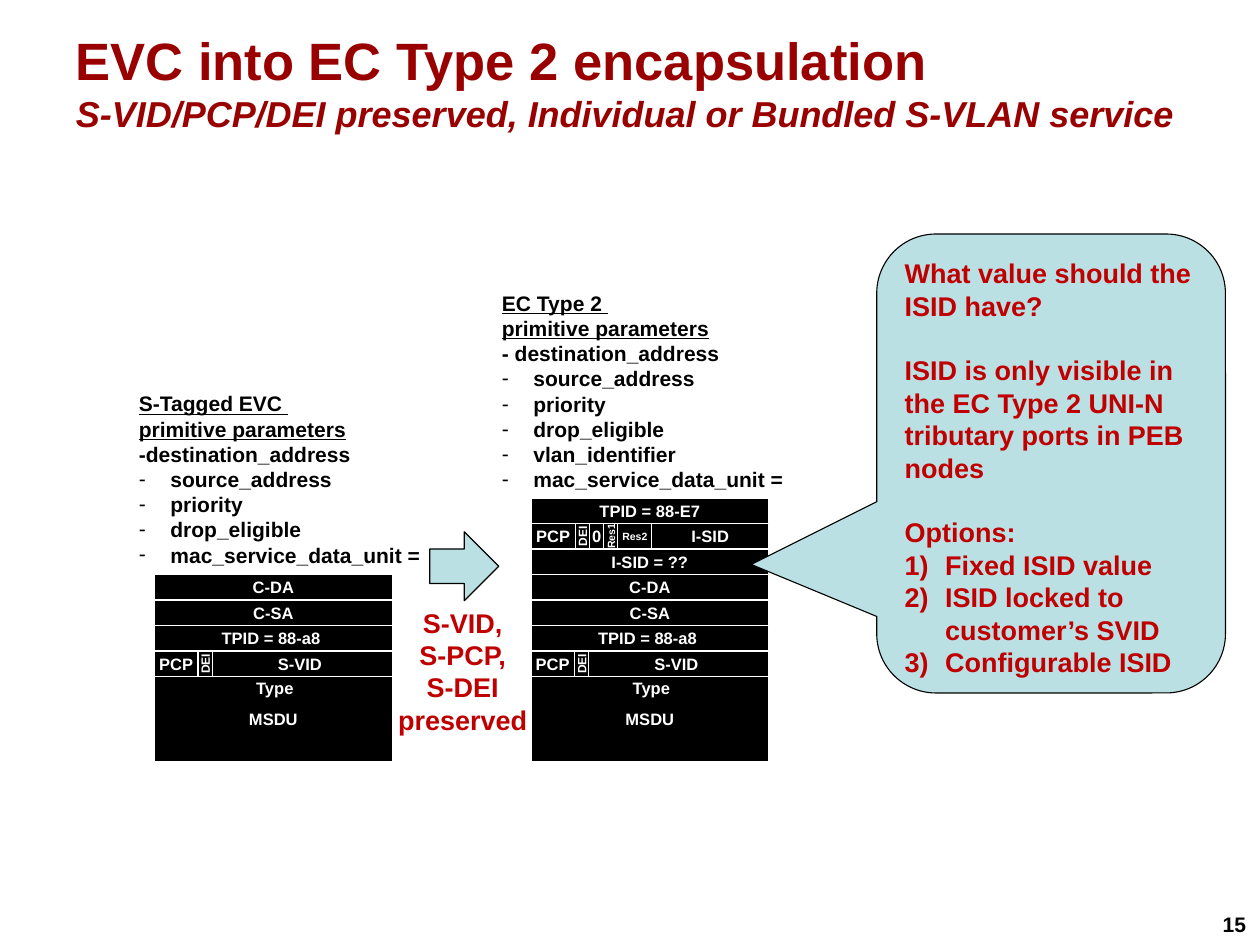
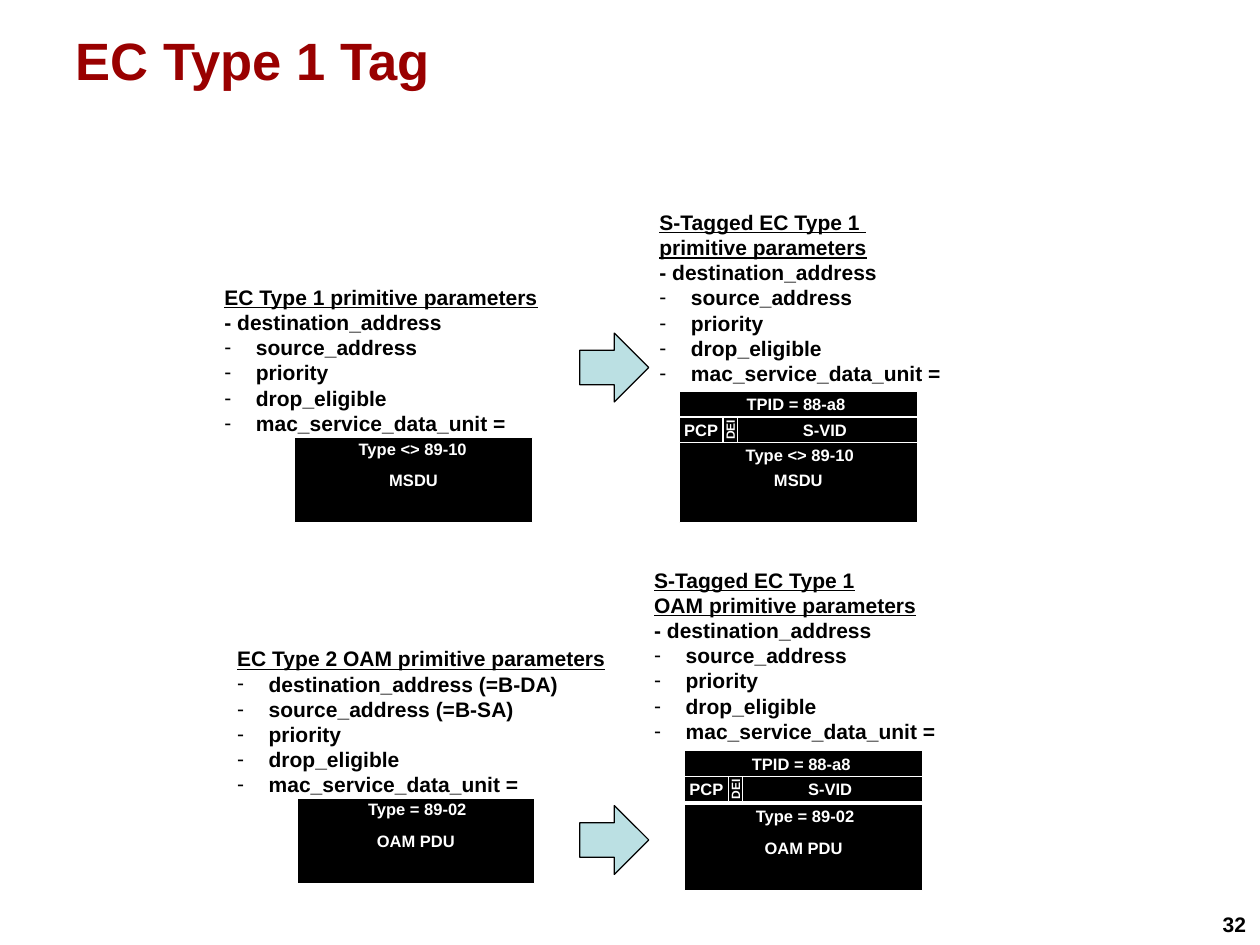
from lxml.etree import SubElement
from pptx import Presentation
from pptx.dml.color import RGBColor
from pptx.enum.shapes import MSO_SHAPE
from pptx.enum.text import MSO_ANCHOR, PP_ALIGN
from pptx.oxml.ns import qn
from pptx.util import Pt

# Shared look
FONT = "Arial"
BLACK, WHITE, TITLE_RED, NOTE_RED, PALE_BLUE = "000000", "FFFFFF", "990000", "C00000", "BBE0E3"
STACK_WIDTH, ROW_HEIGHT, BODY_HEIGHT = 158.5, 17, 57
ARROW_SIZE = 46
LINE_FACTOR = 1.2
BULLET_INDENT, NUMBER_INDENT = 21, 27

# Frame rows: each cell is (text, width, size, vertical)
def full_row(text):
    return [(text, STACK_WIDTH, 11, False)]


S_TPID = full_row("TPID = 88-a8 ")
S_TAG = [("PCP", 29, 11, False), ("DEI", 9.5, 8, True), ("S-VID ", 120, 11, False)]
I_TAG = [("PCP", 29.5, 11, False), ("DEI", 9.5, 8, True), ("0", 9.5, 11, False),
         ("Res1", 9.5, 7, True), ("Res2", 22.5, 7, False), ("I-SID", 78, 11, False)]
CUSTOMER_ROWS = [full_row("C-DA"), full_row("C-SA"), S_TPID, S_TAG]
I_ROWS = [full_row("TPID = 88-E7"), I_TAG, full_row("I-SID = ??")]

# Primitive parameters
ADDRESS = "- destination_address"
COMMON = ["source_address", "priority", "drop_eligible"]
DATA_UNIT = "mac_service_data_unit ="

# Stacks: left, top of rows, rows, top of body, type text, type shift, body text
# Parameters: left, top, width, headings, plain lines, bulleted lines
SLIDES = [
    {
        "number": "15",
        "title": [("EVC into EC Type 2 encapsulation", 35, False),
                  ("S-VID/PCP/DEI preserved, Individual or Bundled S-VLAN service", 24, True)],
        "stacks": [
            (103, 383, CUSTOMER_ROWS, 451, "Type", 0, "MSDU"),
            (354, 332, I_ROWS + CUSTOMER_ROWS, 451, "Type", 0, "MSDU"),
        ],
        "parameters": [
            (85.5, 257, 212, ["S-Tagged EVC ", "primitive parameters"],
             ["-destination_address"], COMMON + [DATA_UNIT]),
            (327.5, 190, 218, ["EC Type 2 ", "primitive parameters"],
             [ADDRESS], COMMON + ["vlan_identifier", DATA_UNIT]),
        ],
        "arrows": [(286.5, 354.5)],
    },
    {
        "number": "32",
        "title": [("EC Type 1 Tag", 35, False)],
        "stacks": [
            (196.5, 291.5, [], 291.5, "Type <> 89-10 ", 0, "MSDU"),
            (198, 532, [], 532, "Type = 89-02", 0, "OAM PDU"),
            (453, 261, [S_TPID, S_TAG], 291.5, "Type <> 89-10", 4.5, "MSDU"),
            (456.5, 500.5, [S_TPID, S_TAG], 536.5, "Type = 89-02", 0, "OAM PDU"),
        ],
        "parameters": [
            (142.5, 186, 248, ["EC Type 1 primitive parameters"],
             [ADDRESS], COMMON + [DATA_UNIT]),
            (151, 427, 270, ["EC Type 2 OAM primitive parameters"], [],
             ["destination_address (=B-DA)", "source_address (=B-SA)",
              "priority", "drop_eligible", DATA_UNIT]),
            (432.5, 136, 218, ["S-Tagged EC Type 1 ", "primitive parameters"],
             [ADDRESS], COMMON + [DATA_UNIT]),
            (429, 374.5, 215, ["S-Tagged EC Type 1", "OAM primitive parameters"],
             [ADDRESS], COMMON + [DATA_UNIT]),
        ],
        "arrows": [(386.5, 222), (386.5, 537)],
    },
]

PRESERVED = ["S-VID,", "S-PCP,", "S-DEI preserved"]
QUESTIONS = ["What value should the ISID have?",
             "ISID is only visible in the EC Type 2 UNI-N tributary ports in PEB nodes",
             "Options:"]
OPTIONS = ["Fixed ISID value", "ISID locked to customer’s SVID", "Configurable ISID"]


def colour(hex_text):
    return RGBColor.from_string(hex_text)


def add_paragraph(frame, text, size, ink, italic=False, underline=False, align=PP_ALIGN.LEFT):
    """Fill the first paragraph if it is still empty, otherwise append one."""
    paragraph = frame.paragraphs[-1]
    if paragraph.runs:
        paragraph = frame.add_paragraph()
    paragraph.alignment = align
    paragraph.line_spacing = Pt(size * LINE_FACTOR)
    run = paragraph.add_run()
    run.text = text
    font = run.font
    font.name, font.size, font.bold = FONT, Pt(size), True
    font.italic, font.underline = italic, underline
    font.color.rgb = colour(ink)
    return paragraph


def set_bullet(paragraph, indent, tag, **attributes):
    properties = paragraph._p.get_or_add_pPr()
    properties.set("marL", str(Pt(indent)))
    properties.set("indent", str(-Pt(indent)))
    SubElement(properties, qn("a:buFont"), typeface=FONT)
    SubElement(properties, qn(tag), **attributes)


def set_frame(shape, margins, wrap=True, anchor=MSO_ANCHOR.TOP):
    frame = shape.text_frame
    frame.margin_left = frame.margin_right = Pt(margins[0])
    frame.margin_top = frame.margin_bottom = Pt(margins[1])
    frame.word_wrap, frame.vertical_anchor = wrap, anchor
    return frame


def add_text_box(slide, left, top, width, height, margins=(7.2, 3.6), **options):
    box = slide.shapes.add_textbox(Pt(left), Pt(top), Pt(width), Pt(height))
    return set_frame(box, margins, **options)


def add_filled(slide, kind, left, top, width, height, fill, line):
    shape = slide.shapes.add_shape(kind, Pt(left), Pt(top), Pt(width), Pt(height))
    shape.shadow.inherit = False
    shape.fill.solid()
    shape.fill.fore_color.rgb = colour(fill)
    shape.line.color.rgb = colour(line)
    shape.line.width = Pt(0.75)
    return shape


def add_cell(slide, left, top, width, height, text, size=11, vertical=False):
    cell = add_filled(slide, MSO_SHAPE.RECTANGLE, left, top, width, height, BLACK, WHITE)
    frame = set_frame(cell, (0, 0), wrap=False, anchor=MSO_ANCHOR.MIDDLE)
    if vertical:
        frame._txBody.bodyPr.set("vert", "vert270")
    add_paragraph(frame, text, size, WHITE, align=PP_ALIGN.CENTER)


def add_stack(slide, left, rows_top, rows, body_top, type_text, type_shift, body_text):
    add_cell(slide, left, body_top, STACK_WIDTH, BODY_HEIGHT, body_text)
    label = add_text_box(slide, left + 1, body_top - 1 + type_shift, STACK_WIDTH, ROW_HEIGHT,
                         margins=(0, 0), wrap=False, anchor=MSO_ANCHOR.MIDDLE)
    add_paragraph(label, type_text, 11, WHITE, align=PP_ALIGN.CENTER)
    for index, row in enumerate(rows):
        cell_left = left
        for text, width, size, vertical in row:
            add_cell(slide, cell_left, rows_top + index * ROW_HEIGHT, width, ROW_HEIGHT,
                     text, size, vertical)
            cell_left += width


def add_parameters(slide, left, top, width, headings, plain, bulleted):
    height = (len(headings) + len(plain) + len(bulleted)) * 14 * LINE_FACTOR + 7.2
    frame = add_text_box(slide, left, top, width, height)
    for text in headings:
        add_paragraph(frame, text, 14, BLACK, underline=True)
    for text in plain:
        add_paragraph(frame, text, 14, BLACK)
    for text in bulleted:
        set_bullet(add_paragraph(frame, text, 14, BLACK), BULLET_INDENT, "a:buChar", char="-")


def add_callout(slide):
    callout = add_filled(slide, MSO_SHAPE.ROUNDED_RECTANGULAR_CALLOUT,
                         584.5, 156, 232.5, 306, PALE_BLUE, BLACK)
    for index, value in enumerate((-0.86, 0.22, 0.17)):
        callout.adjustments[index] = value
    frame = set_frame(callout, (7.2, 3.6))
    for index, text in enumerate(QUESTIONS):
        paragraph = add_paragraph(frame, text, 18, NOTE_RED)
        if index:
            paragraph.space_before = Pt(18 * LINE_FACTOR)
    for text in OPTIONS:
        set_bullet(add_paragraph(frame, text, 18, NOTE_RED), NUMBER_INDENT,
                   "a:buAutoNum", type="arabicParenR")


def add_slide(presentation, content):
    slide = presentation.slides.add_slide(presentation.slide_layouts[6])
    # Title and page number
    title = add_text_box(slide, 42, 14.5, 756, 80, margins=(8.6, 4.3))
    for text, size, italic in content["title"]:
        add_paragraph(title, text, size, TITLE_RED, italic=italic)
    number = add_text_box(slide, 808, 604, 32, 24.5, wrap=False)
    add_paragraph(number, content["number"], 14, BLACK)
    # Frames, their parameters and arrows
    for stack in content["stacks"]:
        add_stack(slide, *stack)
    for parameters in content["parameters"]:
        add_parameters(slide, *parameters)
    for left, top in content["arrows"]:
        add_filled(slide, MSO_SHAPE.RIGHT_ARROW, left, top, ARROW_SIZE, ARROW_SIZE,
                   PALE_BLUE, BLACK)
    return slide


def main():
    presentation = Presentation()
    presentation.slide_width, presentation.slide_height = Pt(840), Pt(630)
    encapsulation, _ = [add_slide(presentation, content) for content in SLIDES]
    # Notes on the encapsulation slide
    preserved = add_text_box(encapsulation, 255.5, 400.5, 106, 94)
    for text in PRESERVED:
        add_paragraph(preserved, text, 18, NOTE_RED, align=PP_ALIGN.CENTER)
    add_callout(encapsulation)
    presentation.save("out.pptx")


if __name__ == "__main__":
    main()
